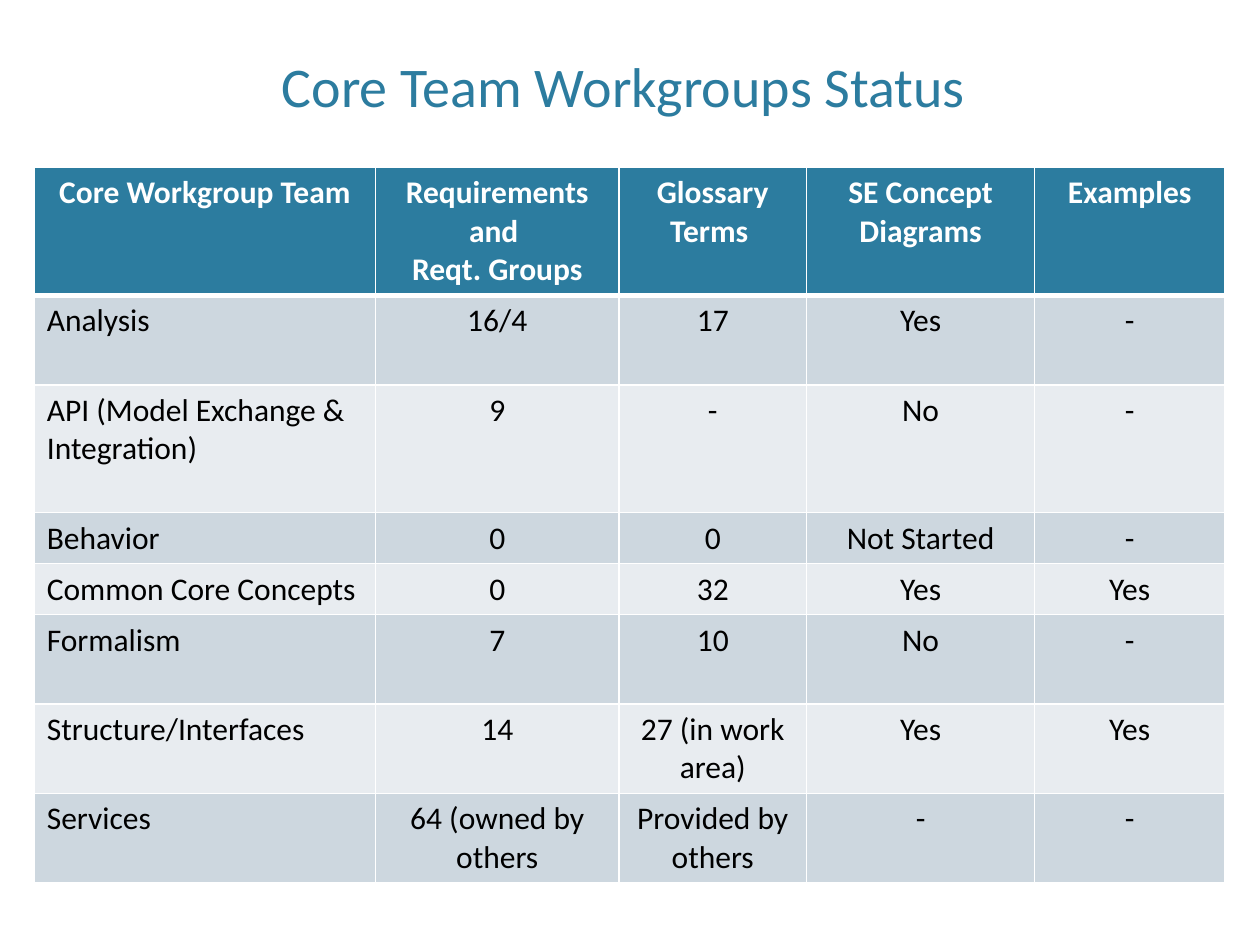
from lxml import etree
from pptx import Presentation
from pptx.dml.color import RGBColor
from pptx.enum.text import MSO_ANCHOR, PP_ALIGN
from pptx.oxml.ns import qn
from pptx.util import Pt

LEFT = PP_ALIGN.LEFT
CENTER = PP_ALIGN.CENTER
BOTTOM = MSO_ANCHOR.BOTTOM

LINE_HEIGHT = 21.95
CELL_PADDING = 7.2

COLUMN_WIDTHS = [195.1, 139, 107.3, 130.3, 108.7]
HEADINGS = ["Core Workgroup Team", "Requirements and \nReqt. Groups",
            "Glossary Terms ", "SE Concept Diagrams", "Examples"]
WORKGROUPS = [
    ["Analysis", "16/4", "17", "Yes", "-"],
    ["API (Model Exchange & Integration)", "9", "-", "No", "-"],
    ["Behavior", "0", "0", "Not Started", "-"],
    ["Common Core Concepts", "0", "32", "Yes", "Yes"],
    ["Formalism", "7", "10", "No", "-"],
    ["Structure/Interfaces", "14", "27 (in work area)", "Yes", "Yes"],
    ["Services", "64 (owned by others", "Provided by others", "-", "-"],
]
# Height of each row, in lines of text
ROW_LINES = [3, 2, 3, 1, 1, 2, 2, 2]


def color(hex_string):
    return RGBColor.from_string(hex_string)


class StatusSlide:
    font = "Calibri"
    accent = "2C7C9F"
    white = "FFFFFF"
    black = "000000"
    bands = ["CDD7DF", "E8ECF0"]

    def __init__(self, presentation):
        self.slide = presentation.slides.add_slide(presentation.slide_layouts[6])

    def format_text(self, text_frame, size, text_color, alignment, bold=False):
        for paragraph in text_frame.paragraphs:
            paragraph.alignment = alignment
            for run in paragraph.runs:
                run.font.name = self.font
                run.font.size = Pt(size)
                run.font.bold = bold
                run.font.color.rgb = color(text_color)

    def title(self, text, left, top, width, height):
        shape = self.slide.shapes.add_textbox(Pt(left), Pt(top), Pt(width), Pt(height))
        text_frame = shape.text_frame
        text_frame.word_wrap = True
        text_frame.vertical_anchor = BOTTOM
        text_frame.text = text
        self.format_text(text_frame, 32, self.accent, CENTER)

    def borders(self, cell, top_width, bottom_width):
        properties = cell._tc.get_or_add_tcPr()
        widths = {"a:lnL": 1, "a:lnR": 1, "a:lnT": top_width, "a:lnB": bottom_width}
        for tag, width in widths.items():
            line = etree.SubElement(properties, qn(tag), w=str(Pt(width)))
            fill = etree.SubElement(line, qn("a:solidFill"))
            etree.SubElement(fill, qn("a:srgbClr"), val=self.white)

    def cell(self, cell, text, row, column):
        header = row == 0
        self.borders(cell, 3 if row == 1 else 1, 3 if header else 1)
        cell.fill.solid()
        cell.fill.fore_color.rgb = color(self.accent if header else self.bands[(row - 1) % 2])
        cell.text_frame.text = text
        self.format_text(cell.text_frame, 18, self.white if header else self.black,
                         CENTER if header or column else LEFT, header)

    def table(self, rows, left, top, widths, heights):
        frame = self.slide.shapes.add_table(len(rows), len(widths), Pt(left), Pt(top),
                                            Pt(sum(widths)), Pt(sum(heights)))
        table = frame.table
        for column, width in zip(table.columns, widths):
            column.width = Pt(width)
        for row_index, (values, height) in enumerate(zip(rows, heights)):
            table.rows[row_index].height = Pt(height)
            for column_index, text in enumerate(values):
                self.cell(table.cell(row_index, column_index), text, row_index, column_index)


def main():
    presentation = Presentation()
    presentation.slide_width = Pt(720)
    presentation.slide_height = Pt(540)
    status = StatusSlide(presentation)

    # Title
    status.title("Core Team Workgroups Status ", 43.2, 8.64, 633.6, 62.64)

    # Workgroup table
    heights = [CELL_PADDING + LINE_HEIGHT * lines for lines in ROW_LINES]
    status.table([HEADINGS] + WORKGROUPS, 19.6, 95.8, COLUMN_WIDTHS, heights)

    presentation.save("out.pptx")


if __name__ == "__main__":
    main()
